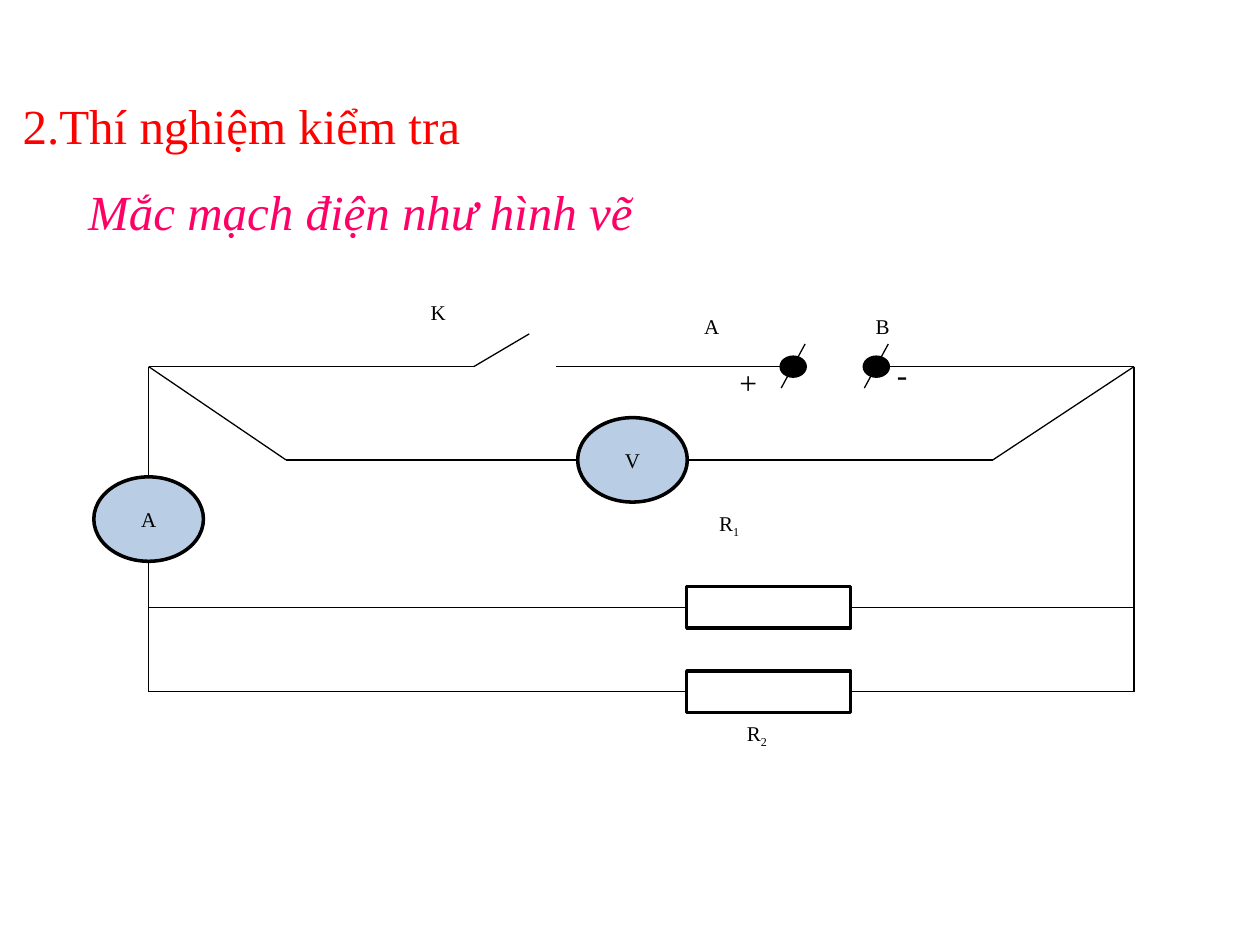
from lxml.etree import SubElement
from pptx import Presentation
from pptx.dml.color import RGBColor
from pptx.enum.shapes import MSO_CONNECTOR, MSO_SHAPE
from pptx.enum.text import MSO_ANCHOR, PP_ALIGN
from pptx.oxml.ns import qn
from pptx.util import Inches, Pt

TITLE = "2.Thí nghiệm kiểm tra"
BODY = "Mắc mạch điện như hình vẽ"
FONT = "Times New Roman"
BLACK, WHITE, METER_BLUE = "000000", "FFFFFF", "B9CDE5"

# Circuit grid
LEFT, RIGHT = 1.18, 9
TOP, VOLTMETER_Y, AMMETER_Y = 2.91, 3.65, 4.12
BRANCHES = (4.82, 5.49)
METER_WIDTH, METER_HEIGHT = 0.87, 0.67
RESISTOR_LEFT, RESISTOR_WIDTH, RESISTOR_HEIGHT = 5.45, 1.3, 0.33
TERMINAL_WIDTH, TERMINAL_HEIGHT = 0.19, 0.15
TERMINALS = (6.2, 6.86)  # left edges
VOLTMETER_X = 5.02

METERS = [("A", LEFT, AMMETER_Y), ("V", VOLTMETER_X, VOLTMETER_Y)]

# Each wire is a chain of points
WIRES = [
    [(LEFT, TOP), (3.76, TOP), (4.2, 2.65)],
    [(4.41, TOP), (TERMINALS[0], TOP)],
    [(TERMINALS[1] + TERMINAL_WIDTH, TOP), (RIGHT, TOP), (RIGHT, BRANCHES[-1])],
    [(LEFT, TOP), (LEFT, AMMETER_Y - METER_HEIGHT / 2)],
    [(LEFT, AMMETER_Y + METER_HEIGHT / 2), (LEFT, BRANCHES[-1])],
    [(LEFT, TOP), (2.27, VOLTMETER_Y), (VOLTMETER_X - METER_WIDTH / 2, VOLTMETER_Y)],
    [(VOLTMETER_X + METER_WIDTH / 2, VOLTMETER_Y), (7.88, VOLTMETER_Y), (RIGHT, TOP)],
]
for branch in BRANCHES:
    WIRES.append([(LEFT, branch), (RESISTOR_LEFT, branch)])
    WIRES.append([(RESISTOR_LEFT + RESISTOR_WIDTH, branch), (RIGHT, branch)])
for terminal in TERMINALS:
    WIRES.append([(terminal + TERMINAL_WIDTH, 2.73), (terminal, 3.08)])

# Text, subscript, left, top, width, size
LABELS = [
    ("K", "", 3.32, 2.33, 0.84, 12),
    ("A", "", 5.49, 2.44, 0.84, 12),
    ("B", "", 6.85, 2.44, 0.82, 12),
    ("R", "1", 5.61, 4, 0.96, 12),
    ("R", "2", 5.83, 5.67, 0.96, 12),
    ("+", "", 5.77, 2.83, 0.55, 18),
    ("-", "", 7.02, 2.77, 0.55, 18),
]
LABEL_HEIGHT = 0.61


def color(value):
    return RGBColor.from_string(value)


def add_run(paragraph, text, size, font_color=BLACK, italic=False):
    run = paragraph.add_run()
    run.text = text
    formats = {"name": FONT, "size": Pt(size), "bold": False, "italic": italic}
    for attribute, value in formats.items():
        setattr(run.font, attribute, value)
    run.font.color.rgb = color(font_color)
    return run


def fill_placeholder(shape, box, text, font_color, margin_top, italic=False):
    for attribute, value in zip(("left", "top", "width", "height"), box):
        setattr(shape, attribute, Inches(value))
    frame = shape.text_frame
    frame.vertical_anchor = MSO_ANCHOR.TOP
    frame.margin_top = Inches(margin_top)
    paragraph = frame.paragraphs[0]
    paragraph.alignment = PP_ALIGN.LEFT
    paragraph.space_before = Pt(0)
    properties = paragraph._p.get_or_add_pPr()
    properties.set("marL", "0")
    properties.set("indent", "0")
    SubElement(properties, qn("a:buNone"))
    add_run(paragraph, text, 28, font_color, italic)


def add_wire(slide, start, end):
    wire = slide.shapes.add_connector(
        MSO_CONNECTOR.STRAIGHT, *(Inches(value) for value in start + end))
    wire.line.color.rgb = color(BLACK)
    wire.line.width = Pt(0.75)
    SubElement(wire._element.spPr, qn("a:effectLst"))


def add_part(slide, kind, center_x, center_y, width, height, fill):
    """Add an outlined circuit part around its centre."""
    box = (center_x - width / 2, center_y - height / 2, width, height)
    shape = slide.shapes.add_shape(kind, *(Inches(value) for value in box))
    shape.shadow.inherit = False
    shape.fill.solid()
    shape.fill.fore_color.rgb = color(fill)
    shape.line.color.rgb = color(BLACK)
    shape.line.width = Pt(2)
    return shape


def add_label(slide, text, subscript, left, top, width, size):
    box = (left, top, width, LABEL_HEIGHT)
    frame = slide.shapes.add_textbox(*(Inches(value) for value in box)).text_frame
    frame.word_wrap = True
    paragraph = frame.paragraphs[0]
    add_run(paragraph, text, size)
    if subscript:
        run = add_run(paragraph, subscript, size)
        run.font._element.set("baseline", "-25000")


def main():
    presentation = Presentation()
    presentation.slide_width, presentation.slide_height = Inches(10), Inches(7.5)
    slide = presentation.slides.add_slide(presentation.slide_layouts[1])

    fill_placeholder(slide.shapes.title, (0.08, 0.58, 9, 1.25), TITLE, "FF0000", 0.18)
    fill_placeholder(slide.placeholders[1], (0.6, 1.35, 9, 4.95), BODY, "FF0066",
                     0.09, italic=True)

    for wire in WIRES:
        for start, end in zip(wire, wire[1:]):
            add_wire(slide, start, end)
    for left in TERMINALS:
        add_part(slide, MSO_SHAPE.OVAL, left + TERMINAL_WIDTH / 2, TOP,
                 TERMINAL_WIDTH, TERMINAL_HEIGHT, BLACK)
    for center_y in BRANCHES:
        add_part(slide, MSO_SHAPE.RECTANGLE, RESISTOR_LEFT + RESISTOR_WIDTH / 2,
                 center_y, RESISTOR_WIDTH, RESISTOR_HEIGHT, WHITE)
    for name, center_x, center_y in METERS:
        meter = add_part(slide, MSO_SHAPE.OVAL, center_x, center_y,
                         METER_WIDTH, METER_HEIGHT, METER_BLUE)
        meter.text_frame.vertical_anchor = MSO_ANCHOR.MIDDLE
        paragraph = meter.text_frame.paragraphs[0]
        paragraph.alignment = PP_ALIGN.CENTER
        add_run(paragraph, name, 12)
    for label in LABELS:
        add_label(slide, *label)

    presentation.save("out.pptx")


if __name__ == "__main__":
    main()
